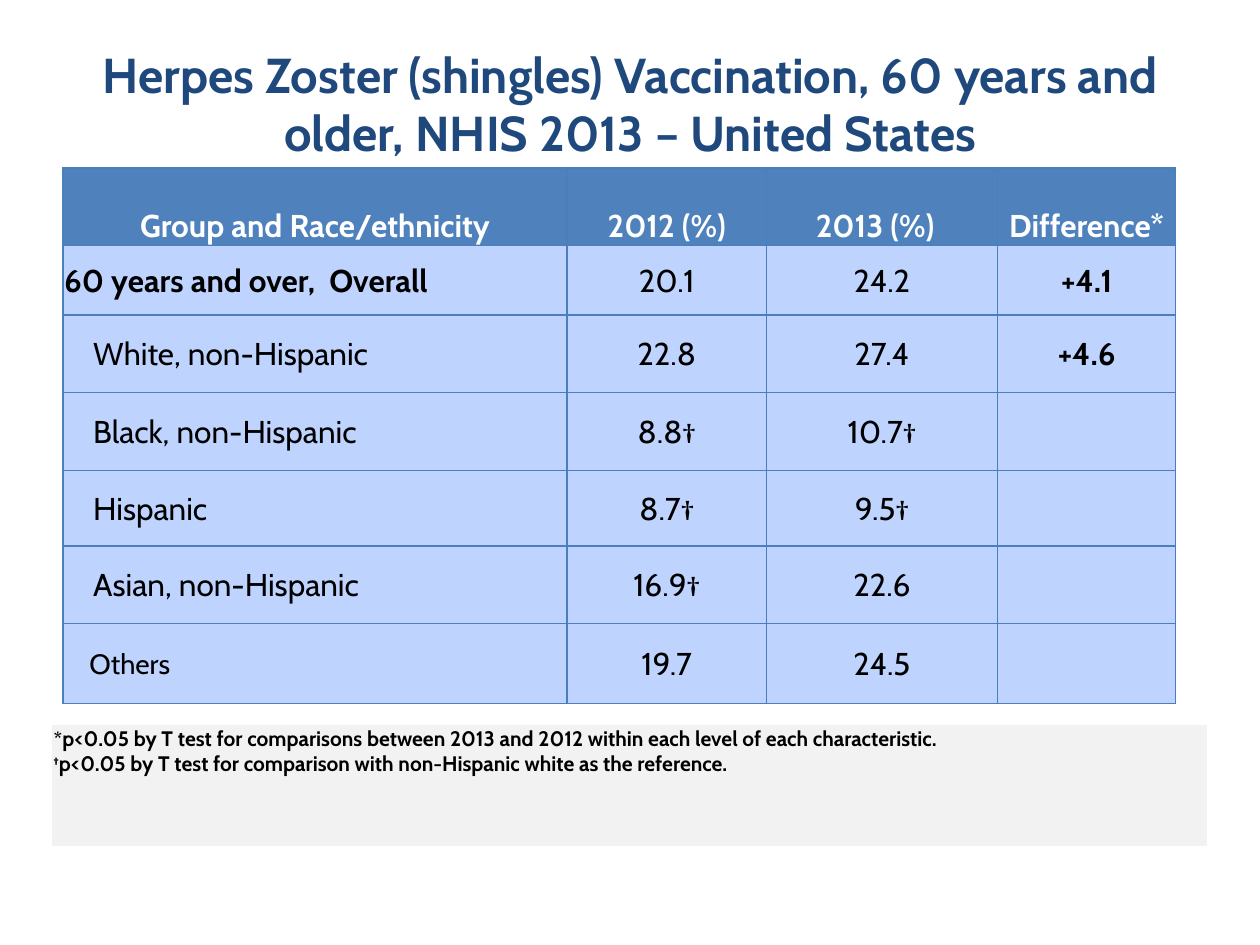
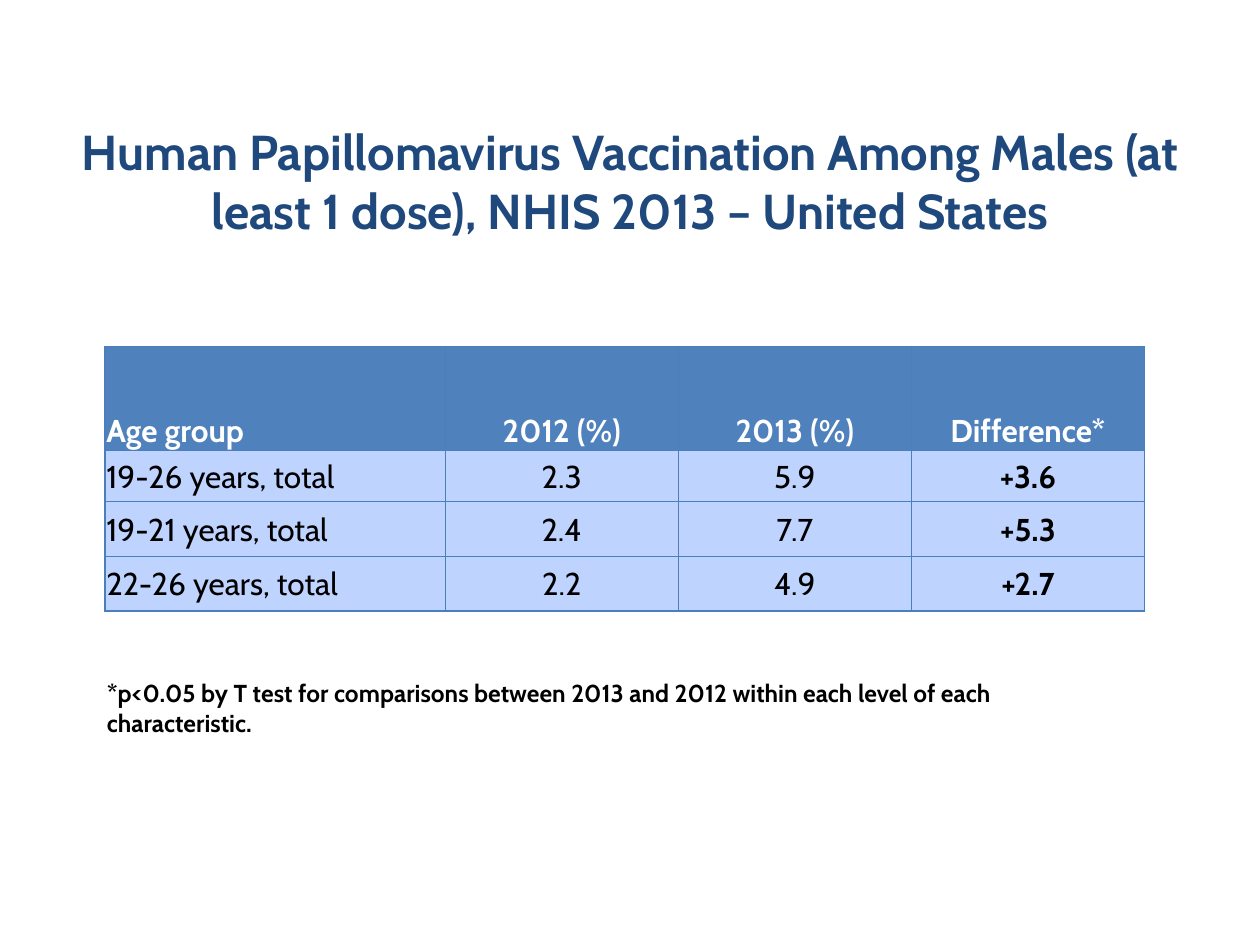
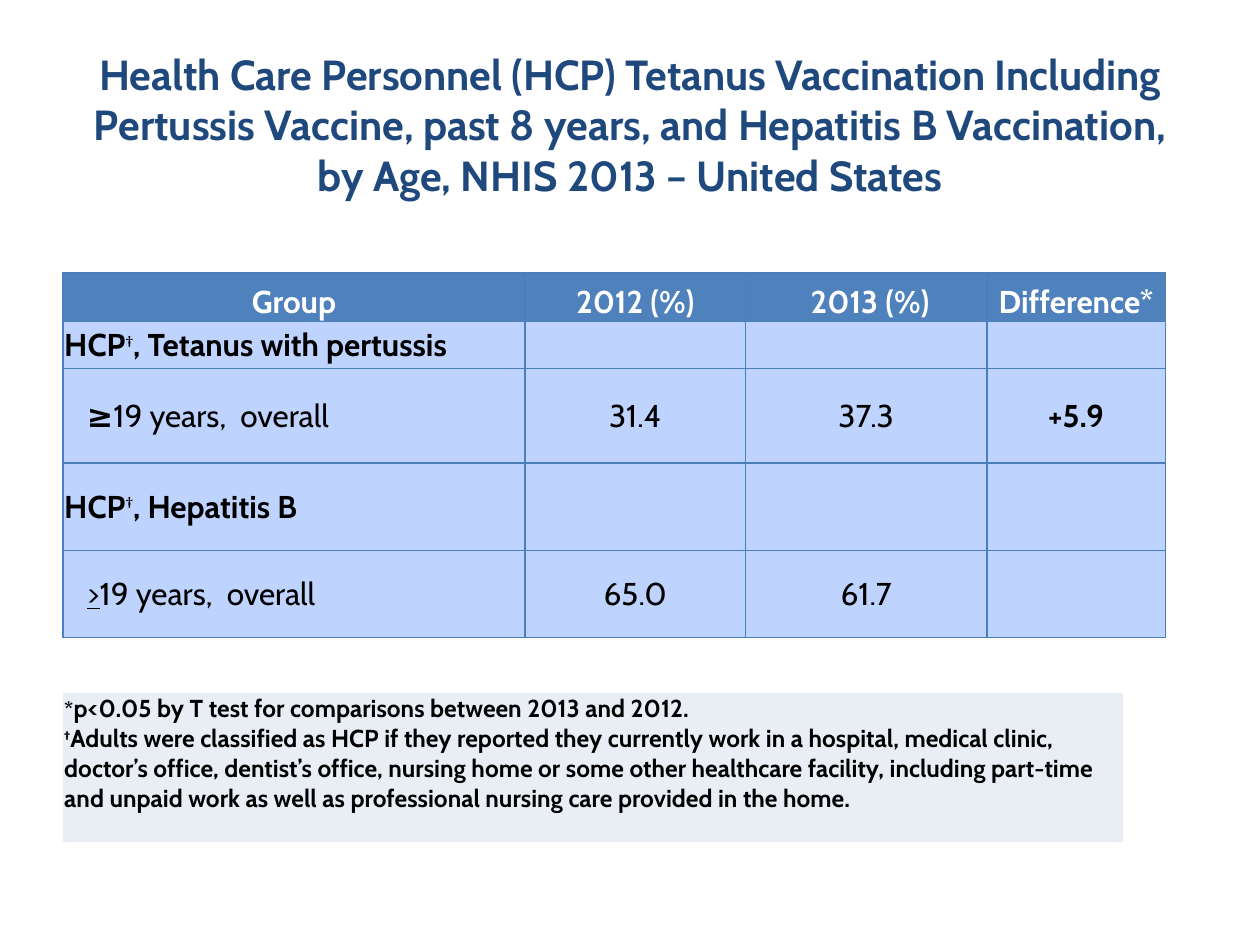
"""Build three slides of adult vaccination tables from the 2013 survey."""
from lxml.etree import SubElement
from pptx import Presentation
from pptx.dml.color import RGBColor
from pptx.enum.text import MSO_ANCHOR, PP_ALIGN
from pptx.oxml.ns import qn
from pptx.util import Inches, Pt

NAVY = RGBColor(0x1F, 0x49, 0x7D)
HEADER_BLUE = RGBColor(0x4F, 0x81, 0xBD)
BORDER_BLUE = RGBColor(0x4B, 0x7E, 0xBC)
BODY_BLUE = RGBColor(0xBF, 0xD3, 0xFF)
NOTE_GRAY = RGBColor(0xF2, 0xF2, 0xF2)
NOTE_BLUE = RGBColor(0xE9, 0xED, 0xF4)
WHITE = RGBColor(0xFF, 0xFF, 0xFF)
BLACK = RGBColor(0, 0, 0)

FONT = "Cabin"
GRID_COLUMNS = 120
CELL_MARGIN = Inches(0.01)
PLAIN_TABLE_STYLE = "{2D5ABB26-0587-4C30-8999-92F81FD0307C}"
LEFT, CENTER = PP_ALIGN.LEFT, PP_ALIGN.CENTER


def write(paragraph, text, size=18, color=BLACK, bold=False, underline=False,
          superscript=False, align=LEFT):
    """Add one formatted run to a paragraph."""
    paragraph.alignment = align
    run = paragraph.add_run()
    run.text = text
    font = run.font
    font.name, font.size, font.bold = FONT, Pt(size), bold
    font.color.rgb = color
    if underline:
        font.underline = True
    if superscript:
        font._element.set("baseline", "30000")


class Deck:
    """Hold the shared style and the current slide."""

    def __init__(self):
        """Start an empty 4:3 presentation."""
        self.presentation = Presentation()
        self.presentation.slide_width = Inches(10)
        self.presentation.slide_height = Inches(7.5)
        self.unit = self.presentation.slide_width / GRID_COLUMNS
        self.slide = None

    def grid(self, *counts):
        """Turn counts of grid steps into lengths."""
        return [round(count * self.unit) for count in counts]

    def add_slide(self, title, area, size=28):
        """Start a slide with its title."""
        layout = self.presentation.slide_layouts[6]
        self.slide = self.presentation.slides.add_slide(layout)
        self.add_text(title, area, size=size, color=NAVY, bold=True, align=CENTER)

    def add_text(self, text, area, **style):
        """Add a wrapped text box."""
        frame = self.slide.shapes.add_textbox(*self.grid(*area)).text_frame
        frame.word_wrap = True
        write(frame.paragraphs[0], text, **style)

    def add_grid(self, left, top, widths, heights):
        """Add an unstyled table."""
        area = self.grid(left, top, sum(widths), sum(heights))
        table = self.slide.shapes.add_table(len(heights), len(widths), *area).table
        table._tbl.tblPr.find(qn("a:tableStyleId")).text = PLAIN_TABLE_STYLE
        for column, width in zip(table.columns, self.grid(*widths)):
            column.width = width
        for row, height in zip(table.rows, self.grid(*heights)):
            row.height = height
        return table

    def format_cell(self, cell, fill, anchor, border=None):
        """Set margins, anchor, border and fill of a cell."""
        cell.margin_left = cell.margin_right = cell.margin_top = CELL_MARGIN
        cell.margin_bottom = 0
        cell.vertical_anchor = anchor
        if border is not None:
            properties = cell._tc.get_or_add_tcPr()
            for side in ("a:lnL", "a:lnR", "a:lnT", "a:lnB"):
                line = SubElement(properties, qn(side), w=str(Pt(0.75)))
                solid = SubElement(line, qn("a:solidFill"))
                SubElement(solid, qn("a:srgbClr"), val=str(border))
        cell.fill.solid()
        cell.fill.fore_color.rgb = fill

    def add_data_table(self, left, top, widths, heights, header, rows,
                       header_align=CENTER):
        """Add a table of labels, yearly rates and bold differences."""
        table = self.add_grid(left, top, widths, heights)
        for index, text in enumerate(header):
            cell = table.cell(0, index)
            self.format_cell(cell, HEADER_BLUE, MSO_ANCHOR.BOTTOM, BORDER_BLUE)
            write(cell.text_frame.paragraphs[0], text, color=WHITE, bold=True,
                  align=CENTER if index else header_align)
        for row_index, (indent, label, *values) in enumerate(rows, 1):
            for index in range(len(widths)):
                cell = table.cell(row_index, index)
                self.format_cell(cell, BODY_BLUE, MSO_ANCHOR.MIDDLE, BORDER_BLUE)
                paragraph = cell.text_frame.paragraphs[0]
                if index == 0:
                    cell.margin_left = CELL_MARGIN + Inches(indent)
                    for text, style in label:
                        write(paragraph, text, **style)
                elif index <= len(values):
                    write(paragraph, values[index - 1], align=CENTER,
                          bold=index == len(widths) - 1)
        return table

    def add_notes_table(self, left, top, width, heights, fill, mark_size, size, notes):
        """Add a shaded table of marked footnotes."""
        table = self.add_grid(left, top, [width], heights)
        for cell in table.iter_cells():
            self.format_cell(cell, fill, MSO_ANCHOR.TOP)
        frame = table.cell(0, 0).text_frame
        for index, (mark, text) in enumerate(notes):
            paragraph = frame.add_paragraph() if index else frame.paragraphs[0]
            raised = mark == "†"
            write(paragraph, mark, size=size if raised else mark_size, bold=True,
                  superscript=raised)
            write(paragraph, text, size=size, bold=True)


def label(text, **style):
    """Make a label of one run."""
    return [(text, style)]


def personnel_label(text):
    """Make a bold label with a raised dagger after HCP."""
    return [("HCP", {"bold": True}), ("†", {"superscript": True}), (text, {"bold": True})]


def main():
    """Build and save the slides."""
    deck = Deck()
    rates = ["2012 (%)", "2013 (%)", "Difference*"]
    level_note = ("p<0.05 by T test for comparisons between 2013 and 2012 "
                  "within each level of each characteristic.")

    deck.add_slide("Herpes Zoster (shingles) Vaccination, 60 years and older, "
                   "NHIS 2013 – United States", (6, 3.6, 108, 10.4))
    shingles = deck.add_data_table(
        6, 16, [48, 19, 22, 17], [7.4, 6.6, 7.4, 7.4, 7.2, 7.4, 7.6],
        ["Group and Race/ethnicity", *rates],
        [
            (0, label("60 years and over,  Overall", bold=True), "20.1", "24.2", "+4.1"),
            (0.23, label("White, non-Hispanic"), "22.8", "27.4", "+4.6"),
            (0.23, label("Black, non-Hispanic"), "8.8†", "10.7†"),
            (0.23, label("Hispanic"), "8.7†", "9.5†"),
            (0.23, label("Asian, non-Hispanic"), "16.9†", "22.6"),
            (0.2, label("Others", size=16), "19.7", "24.5"),
        ])
    shingles.cell(0, 2).margin_right = Inches(0.12)
    deck.add_notes_table(5, 69, 110, [5, 6.6], NOTE_GRAY, 11, 12, [
        ("*", level_note),
        ("†", "p<0.05 by T test for comparison with non-Hispanic white as the reference."),
    ])

    deck.add_slide("Human Papillomavirus Vaccination Among Males (at least 1 dose), "
                   "NHIS 2013 – United States", (6, 11, 108, 15))
    deck.add_data_table(
        10, 33, [32.4] + [22.2] * 3, [9.9, 4.9, 5.2, 5.2], ["Age group", *rates],
        [
            (0, label("19-26 years, total"), "2.3", "5.9", "+3.6"),
            (0, label("19-21 years, total"), "2.4", "7.7", "+5.3"),
            (0, label("22-26 years, total"), "2.2", "4.9", "+2.7"),
        ], header_align=LEFT)
    deck.add_text("*" + level_note, (9, 64, 99, 6.8), size=14, bold=True)

    deck.add_slide("Health Care Personnel (HCP) Tetanus Vaccination Including Pertussis "
                   "Vaccine, past 8 years, and Hepatitis B Vaccination, by Age, "
                   "NHIS 2013 – United States", (6, 4, 108, 10), size=24)
    adults = ("19 years,  overall", {})
    personnel = deck.add_data_table(
        6, 26, [44, 21, 23, 17], [4.6, 4.5, 9, 8.3, 8.3], ["Group", *rates],
        [
            (0, personnel_label(", Tetanus with pertussis")),
            (0.18, [("≥", {"bold": True}), adults], "31.4", "37.3", "+5.9"),
            (0, personnel_label(", Hepatitis B")),
            (0.18, [(">", {"underline": True}), adults], "65.0", "61.7"),
        ])
    personnel.cell(0, 2).margin_left = Inches(0.07)
    deck.add_notes_table(6, 66, 101, [14.2], NOTE_BLUE, 12, 14, [
        ("*", "p<0.05 by T test for comparisons between 2013 and 2012."),
        ("†", "Adults were classified as HCP if they reported they currently work in a "
              "hospital, medical clinic, doctor’s office, dentist’s office, nursing home "
              "or some other healthcare facility, including part-time and unpaid work as "
              "well as professional nursing care provided in the home."),
    ])

    deck.presentation.save("out.pptx")


if __name__ == "__main__":
    main()
